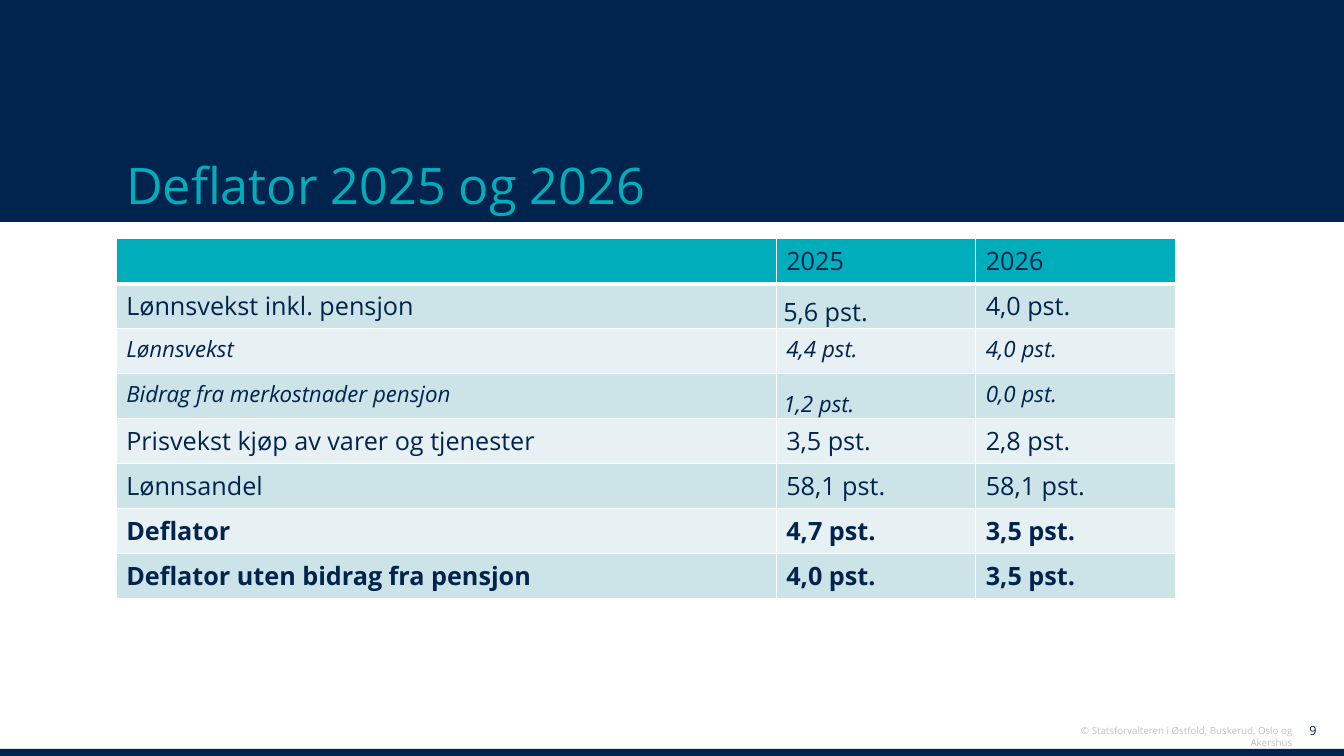
from dataclasses import dataclass

from lxml import etree
from pptx import Presentation
from pptx.dml.color import RGBColor
from pptx.enum import shapes, text
from pptx.oxml import ns
from pptx.util import Pt


@dataclass(frozen=True)
class Theme:
    font: str = "Open Sans"
    navy: str = "00244E"
    teal: str = "00ADBA"
    grey: str = "BFC2C0"
    white: str = "FFFFFF"
    bands: tuple = ("CCE3E7", "E7F1F3")
    title: int = 36
    body: int = 18
    detail: int = 16
    number: int = 9
    footer: int = 7


THEME = Theme()
COLUMN_WIDTHS = (471.5, 142.5, 142.5)
ROW_HEIGHT = 32.13
ROWS = (
    ("", "2025", "2026"),
    ("Lønnsvekst inkl. pensjon", "5,6 pst.", "4,0 pst."),
    ("Lønnsvekst", "4,4 pst.", "4,0 pst."),
    ("Bidrag fra merkostnader pensjon", "1,2 pst.", "0,0 pst."),
    ("Prisvekst kjøp av varer og tjenester", "3,5 pst.", "2,8 pst."),
    ("Lønnsandel", "58,1 pst.", "58,1 pst."),
    ("Deflator", "4,7 pst.", "3,5 pst."),
    ("Deflator uten bidrag fra pensjon", "4,0 pst.", "3,5 pst."),
)
DETAIL_ROWS = (2, 3)
BOLD_ROWS = (6, 7)
LOW_CELLS = ((1, 1), (3, 1))


def add_span(para, words, size, color, bold=False, italic=False):
    span = para.add_run()
    span.text = words
    span.font.name = THEME.font
    span.font.size = Pt(size)
    span.font.bold = bold
    span.font.italic = italic
    span.font.color.rgb = RGBColor.from_string(color)


def add_band(page, top, height):
    band = page.shapes.add_shape(
        shapes.MSO_SHAPE.RECTANGLE, 0, Pt(top), Pt(960), Pt(height)
    )
    band.shadow.inherit = False
    band.fill.solid()
    band.fill.fore_color.rgb = RGBColor.from_string(THEME.navy)
    band.line.fill.background()


def add_label(page, place, words, size, color, anchor, align):
    box = page.shapes.add_textbox(*map(Pt, place))
    frame = box.text_frame
    frame.word_wrap = True
    frame.vertical_anchor = anchor
    para = frame.paragraphs[0]
    para.alignment = align
    add_span(para, words, size, color)
    return frame


def add_borders(cell, bottom_width):
    properties = cell._tc.get_or_add_tcPr()
    widths = {"lnL": 1, "lnR": 1, "lnT": 1, "lnB": bottom_width}
    for position, (side, width) in enumerate(widths.items()):
        line = etree.Element(ns.qn(f"a:{side}"), w=str(Pt(width)))
        fill = etree.SubElement(line, ns.qn("a:solidFill"))
        etree.SubElement(fill, ns.qn("a:srgbClr"), val=THEME.white)
        properties.insert(position, line)


def fill_cell(cell, row, column, words):
    color = THEME.bands[(row - 1) % 2] if row else THEME.teal
    cell.fill.solid()
    cell.fill.fore_color.rgb = RGBColor.from_string(color)
    add_borders(cell, 1 if row else 3)
    if (row, column) in LOW_CELLS:
        cell.vertical_anchor = text.MSO_ANCHOR.BOTTOM
        cell.margin_left = cell.margin_right = Pt(5)
        cell.margin_top = cell.margin_bottom = 0
    para = cell.text_frame.paragraphs[0]
    if words:
        detail = row in DETAIL_ROWS
        size = THEME.detail if detail else THEME.body
        add_span(para, words, size, THEME.navy, row in BOLD_ROWS, detail)


def add_deflator_table(page):
    table = page.shapes.add_table(
        len(ROWS), len(COLUMN_WIDTHS), Pt(83), Pt(170.6),
        Pt(sum(COLUMN_WIDTHS)), Pt(ROW_HEIGHT * len(ROWS)),
    ).table
    for column, width in zip(table.columns, COLUMN_WIDTHS):
        column.width = Pt(width)
    for row, values in enumerate(ROWS):
        table.rows[row].height = Pt(ROW_HEIGHT)
        for column, words in enumerate(values):
            fill_cell(table.cell(row, column), row, column, words)


def main():
    deck = Presentation()
    deck.slide_width, deck.slide_height = Pt(960), Pt(540)
    page = deck.slides.add_slide(deck.slide_layouts[6])
    anchors, aligns = text.MSO_ANCHOR, text.PP_ALIGN
    add_band(page, 535, 5)
    add_band(page, 0, 158.5)
    add_label(page, (908.6, 512.6, 38.9, 18.7), "9", THEME.number,
              THEME.navy, anchors.MIDDLE, aligns.RIGHT)
    footer = add_label(page, (734.4, 514.1, 195.8, 15.8),
                       "© Statsforvalteren i Østfold, Buskerud, Oslo og Akershus",
                       THEME.footer, THEME.grey, anchors.TOP, aligns.RIGHT)
    footer.auto_size = text.MSO_AUTO_SIZE.SHAPE_TO_FIT_TEXT
    title = add_label(page, (83, 68.4, 793.4, 85), "Deflator 2025 og 2026",
                      THEME.title, THEME.teal, anchors.BOTTOM, aligns.LEFT)
    title.margin_bottom = 0
    add_deflator_table(page)
    deck.save("out.pptx")


if __name__ == "__main__":
    main()
